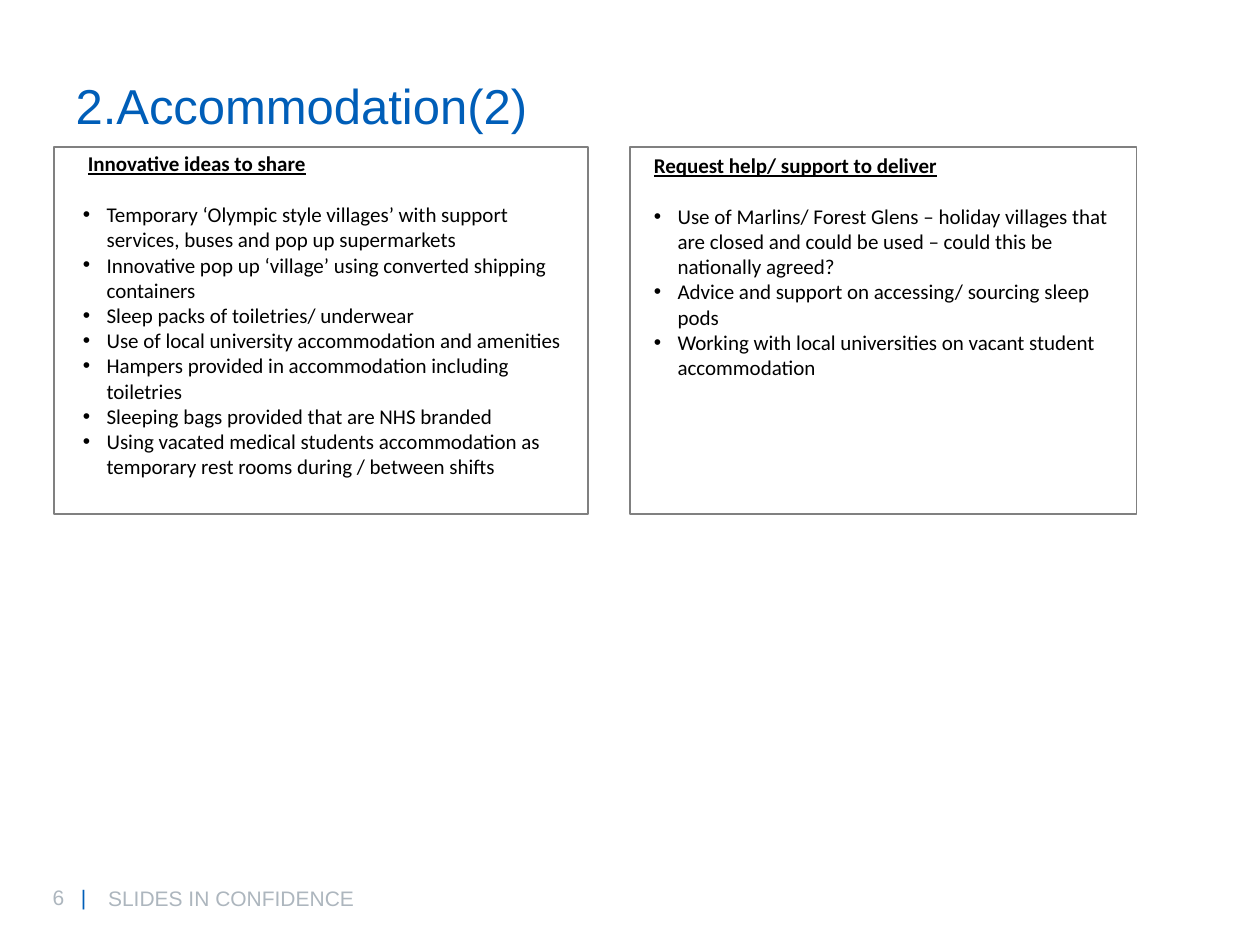
from dataclasses import dataclass

from lxml import etree
from pptx import Presentation
from pptx.dml.color import RGBColor
from pptx.enum.shapes import MSO_SHAPE
from pptx.enum.text import MSO_ANCHOR, MSO_AUTO_SIZE, PP_ALIGN
from pptx.oxml.ns import qn
from pptx.util import Cm, Pt

RECTANGLE = MSO_SHAPE.RECTANGLE
TOP, MIDDLE = MSO_ANCHOR.TOP, MSO_ANCHOR.MIDDLE
LEFT = PP_ALIGN.LEFT
NO_AUTOFIT = MSO_AUTO_SIZE.NONE

BLUE = RGBColor(0x00, 0x5E, 0xB8)
PALE_GREY = RGBColor(0xAD, 0xB6, 0xBE)
FRAME_GREY = RGBColor(0x80, 0x80, 0x80)
BLACK = RGBColor(0x00, 0x00, 0x00)
WHITE = RGBColor(0xFF, 0xFF, 0xFF)

BULLET_INDENT = Cm(0.48)
HEADING_GAP = Pt(14.6)


@dataclass(frozen=True)
class Area:
    """A rectangle on the slide, in centimetres."""
    left: float
    top: float
    width: float
    height: float

    def lengths(self) -> tuple[Cm, Cm, Cm, Cm]:
        return Cm(self.left), Cm(self.top), Cm(self.width), Cm(self.height)


@dataclass(frozen=True)
class Panel:
    frame: Area
    text: Area
    heading: str
    heading_indent: float
    ideas: tuple[str, ...]


PANELS = (
    Panel(
        Area(1.09, 2.97, 10.77, 7.39), Area(1.42, 2.92, 10.21, 7.44),
        "Innovative ideas to share", 0.1,
        (
            "Temporary ‘Olympic style villages’ with support services, buses and pop up supermarkets",
            "Innovative pop up ‘village’ using converted shipping containers",
            "Sleep packs of toiletries/ underwear",
            "Use of local university accommodation and amenities",
            "Hampers provided in accommodation including toiletries",
            "Sleeping bags provided that are NHS branded",
            "Using vacated medical students accommodation as temporary rest rooms during / between shifts",
        ),
    ),
    Panel(
        Area(12.7, 2.97, 10.21, 7.39), Area(12.93, 2.95, 10.21, 5.38),
        "Request help/ support to deliver", 0,
        (
            "Use of Marlins/ Forest Glens – holiday villages that are closed and could be used – could this be nationally agreed?",
            "Advice and support on accessing/ sourcing sleep pods",
            "Working with local universities on vacant student accommodation",
        ),
    ),
)


def add_span(para, text: str, *, size: float = 12, font: str = "Arial",
             color: RGBColor = BLACK, bold: bool = False, underline: bool = False) -> None:
    span = para.add_run()
    span.text = text
    span.font.size = Pt(size)
    span.font.name = font
    span.font.color.rgb = color
    span.font.bold = bold
    span.font.underline = underline


def add_text_box(page, area: Area, anchor: MSO_ANCHOR = TOP):
    """Add an empty wrapping box and return its text frame."""
    frame = page.shapes.add_textbox(*area.lengths()).text_frame
    frame.word_wrap = True
    frame.vertical_anchor = anchor
    return frame


def set_indent(para, margin: int, first_line: int = 0) -> None:
    properties = para._p.get_or_add_pPr()
    properties.set("marL", str(margin))
    properties.set("indent", str(first_line))


def add_bullet(para) -> None:
    set_indent(para, BULLET_INDENT, -BULLET_INDENT)
    properties = para._p.get_or_add_pPr()
    etree.SubElement(properties, qn("a:buFont")).set("typeface", "Arial")
    etree.SubElement(properties, qn("a:buChar")).set("char", "•")


def add_tab_stop(para, position: int) -> None:
    tabs = etree.SubElement(para._p.get_or_add_pPr(), qn("a:tabLst"))
    stop = etree.SubElement(tabs, qn("a:tab"))
    stop.set("pos", str(position))
    stop.set("algn", "l")


def add_frame(page, area: Area) -> None:
    shape = page.shapes.add_shape(RECTANGLE, *area.lengths())
    shape.shadow.inherit = False
    shape.fill.solid()
    shape.fill.fore_color.rgb = WHITE
    shape.line.color.rgb = FRAME_GREY
    shape.line.width = Pt(1)


def add_panel(page, panel: Panel) -> None:
    add_frame(page, panel.frame)
    box = add_text_box(page, panel.text)
    heading = box.paragraphs[0]
    set_indent(heading, Cm(panel.heading_indent))
    add_span(heading, panel.heading, font="Calibri", bold=True, underline=True)
    for index, idea in enumerate(panel.ideas):
        para = box.add_paragraph()
        if index == 0:
            para.space_before = HEADING_GAP
        add_bullet(para)
        add_span(para, idea, font="Calibri")


def set_title(page, text: str) -> None:
    title = page.shapes.title
    title.left, title.top, title.width, title.height = Area(1.27, 1.52, 18.24, 1.7).lengths()
    title.text_frame.auto_size = NO_AUTOFIT
    title.text_frame.vertical_anchor = TOP
    para = title.text_frame.paragraphs[0]
    para.alignment = LEFT
    para.line_spacing = 0.9
    add_span(para, text, size=28, color=BLUE)


def add_footer(page) -> None:
    number = add_text_box(page, Area(0.81, 17.7, 1.8, 0.76)).paragraphs[0]
    add_tab_stop(number, Cm(0.57))
    add_span(number, "6\t", color=PALE_GREY)
    add_span(number, "|", color=BLUE)
    notice = add_text_box(page, Area(1.93, 17.6, 15.9, 1.02), MIDDLE).paragraphs[0]
    add_span(notice, "SLIDES IN CONFIDENCE", color=PALE_GREY)


def main() -> None:
    deck = Presentation()
    deck.slide_width, deck.slide_height = Cm(25.4), Cm(19.05)
    page = deck.slides.add_slide(deck.slide_layouts.get_by_name("Title Only"))
    set_title(page, "2.Accommodation(2)")
    for panel in PANELS:
        add_panel(page, panel)
    add_footer(page)
    deck.save("out.pptx")


if __name__ == "__main__":
    main()
